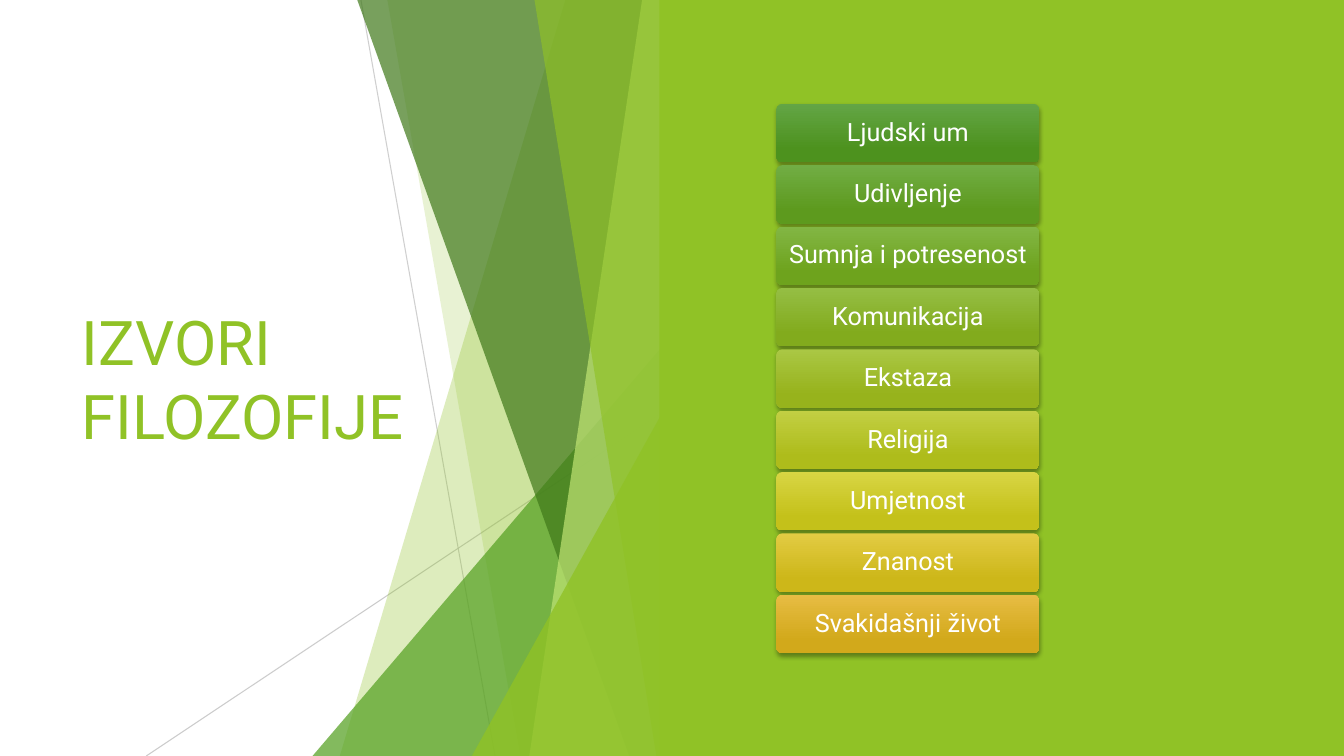
"""Build the slide on the sources of philosophy."""
from lxml import etree
from pptx import Presentation, util as u
from pptx.dml.color import RGBColor
from pptx.enum import shapes, text
from pptx.oxml.ns import qn

Inches = u.Inches
FONT = "Roboto"
WHITE = RGBColor(0xFF, 0xFF, 0xFF)
LIME = RGBColor(0x90, 0xC2, 0x26)
PALE_LIME = RGBColor(0xC0, 0xE4, 0x74)
GREEN = RGBColor(0x54, 0xA0, 0x21)
DARK_GREEN = RGBColor(0x3F, 0x78, 0x19)
GREY = RGBColor(0xBF, 0xBF, 0xBF)

FACET_TOP, FACET_RIGHT, BOTTOM = -0.01, 6.66, 7.5
BAR_LEFT, BAR_WIDTH, BAR_HEIGHT = 7.7, 2.61, 0.58
FIRST_BAR, LAST_BAR = 1.03, 5.9


def set_opacity(shape, percent):
    """Give the shape's plain colour an opacity."""
    colour = shape.element.spPr.find(".//" + qn("a:srgbClr"))
    etree.SubElement(colour, qn("a:alpha"), val=str(percent * 1000))


def write(box, words, size, colour, align, frame_format):
    """Write one formatted paragraph into a box."""
    frame = box.text_frame
    for name, value in frame_format.items():
        setattr(frame, name, value)
    para = frame.paragraphs[0]
    para.alignment = align
    span = para.add_run()
    span.text = words
    for name, value in {"name": FONT, "size": u.Pt(size)}.items():
        setattr(span.font, name, value)
    span.font.color.rgb = colour
    return para


deck = Presentation()
deck.slide_width, deck.slide_height = Inches(13.33), Inches(7.5)
page = deck.slides.add_slide(deck.slide_layouts[5])

title = page.shapes.title
title_place = {"left": 0.71, "top": 1.51, "width": 3.88, "height": 4.48}
for name, value in title_place.items():
    setattr(title, name, Inches(value))
title_format = {
    "word_wrap": True,
    "auto_size": text.MSO_AUTO_SIZE.NONE,
    "vertical_anchor": text.MSO_ANCHOR.MIDDLE,
}
write(title, "IZVORI FILOZOFIJE", 44, LIME, text.PP_ALIGN.LEFT, title_format)

facets = page.shapes.add_group_shape()
rays = [(3.58, 0, 4.91, 7.5, 75), (6.66, 4.03, 1.45, 7.5, 80)]
for *ends, opacity in rays:
    ray = facets.shapes.add_connector(
        shapes.MSO_CONNECTOR.STRAIGHT, *[Inches(end) for end in ends])
    ray.line.color.rgb = GREY
    ray.line.width = u.Pt(0.75)
    set_opacity(ray, opacity)
    etree.SubElement(ray.element.spPr, qn("a:effectLst"))

bands = [
    ("blade", 5.61, 3.37, LIME, 30),
    ("blade", 3.84, 5.16, LIME, 20),
    ("triangle", 3.1, 3.33, GREEN, 72),
    ("blade", 3.54, 6.24, DARK_GREEN, 70),
    ("blade", 6.37, 5.25, PALE_LIME, 70),
    ("blade", 5.3, 6.51, LIME, 65),
    ("triangle", 4.68, 3.93, LIME, 80),
]
for kind, first, second, colour, opacity in bands:
    if kind == "triangle":
        left, top = first, second
        band = facets.shapes.add_shape(
            shapes.MSO_SHAPE.ISOSCELES_TRIANGLE, Inches(left), Inches(top),
            Inches(FACET_RIGHT - left), Inches(BOTTOM - top))
        band.adjustments[0] = 1
    else:
        head, foot = first, second
        outline = facets.shapes.build_freeform(Inches(head), Inches(FACET_TOP))
        corners = [(FACET_RIGHT, FACET_TOP), (FACET_RIGHT, BOTTOM), (foot, BOTTOM)]
        outline.add_line_segments([(Inches(x), Inches(y)) for x, y in corners])
        band = outline.convert_to_shape()
    band.shadow.inherit = False
    band.fill.solid()
    band.fill.fore_color.rgb = colour
    band.line.fill.background()
    set_opacity(band, opacity)

panel = page.shapes.add_shape(
    shapes.MSO_SHAPE.RECTANGLE, Inches(6.54), 0, Inches(6.8), Inches(7.5))
panel.shadow.inherit = False
panel.fill.solid()
panel.fill.fore_color.rgb = LIME
panel.line.fill.background()

sources = [
    ("Ljudski um", RGBColor(0x63, 0xA5, 0x45), RGBColor(0x4D, 0x92, 0x1E)),
    ("Udivljenje", RGBColor(0x71, 0xAD, 0x44), RGBColor(0x5D, 0x9A, 0x1E)),
    ("Sumnja i potresenost", RGBColor(0x82, 0xB6, 0x44), RGBColor(0x6E, 0xA3, 0x1D)),
    ("Komunikacija", RGBColor(0x95, 0xBE, 0x44), RGBColor(0x82, 0xAB, 0x1D)),
    ("Ekstaza", RGBColor(0xAA, 0xC7, 0x44), RGBColor(0x97, 0xB3, 0x1C)),
    ("Religija", RGBColor(0xC2, 0xCF, 0x43), RGBColor(0xAE, 0xBC, 0x1B)),
    ("Umjetnost", RGBColor(0xD8, 0xD5, 0x43), RGBColor(0xC4, 0xC1, 0x1A)),
    ("Znanost", RGBColor(0xE2, 0xCB, 0x43), RGBColor(0xCD, 0xB7, 0x19)),
    ("Svakidašnji život", RGBColor(0xE7, 0xBC, 0x43), RGBColor(0xD2, 0xA9, 0x1B)),
]
bar_format = {
    "word_wrap": True,
    "vertical_anchor": text.MSO_ANCHOR.MIDDLE,
    "margin_left": Inches(0.09),
    "margin_right": Inches(0.09),
    "margin_top": Inches(0.04),
    "margin_bottom": Inches(0.04),
}
bar_step = (LAST_BAR - FIRST_BAR) / (len(sources) - 1)
bars = page.shapes.add_group_shape()
for index, (words, light, deep) in enumerate(sources):
    bar = bars.shapes.add_shape(
        shapes.MSO_SHAPE.ROUNDED_RECTANGLE,
        Inches(BAR_LEFT), Inches(FIRST_BAR + index * bar_step),
        Inches(BAR_WIDTH), Inches(BAR_HEIGHT))
    bar.adjustments[0] = 0.1
    bar.line.fill.background()
    bar.fill.gradient()
    bar.fill.gradient_angle = 270
    for stop, position, colour in zip(bar.fill.gradient_stops, (0, 0.78), (light, deep)):
        stop.position = position
        stop.color.rgb = colour
    bar.shadow.inherit = False
    effects = bar.element.spPr.find(qn("a:effectLst"))
    shadow = etree.SubElement(
        effects, qn("a:outerShdw"), blurRad=str(u.Pt(3)), dist=str(u.Pt(2)),
        dir="5400000", algn="ctr", rotWithShape="0")
    shade = etree.SubElement(shadow, qn("a:srgbClr"), val="000000")
    etree.SubElement(shade, qn("a:alpha"), val="35000")
    para = write(bar, words, 18, WHITE, text.PP_ALIGN.CENTER, bar_format)
    para.line_spacing = 0.9

deck.save("out.pptx")
